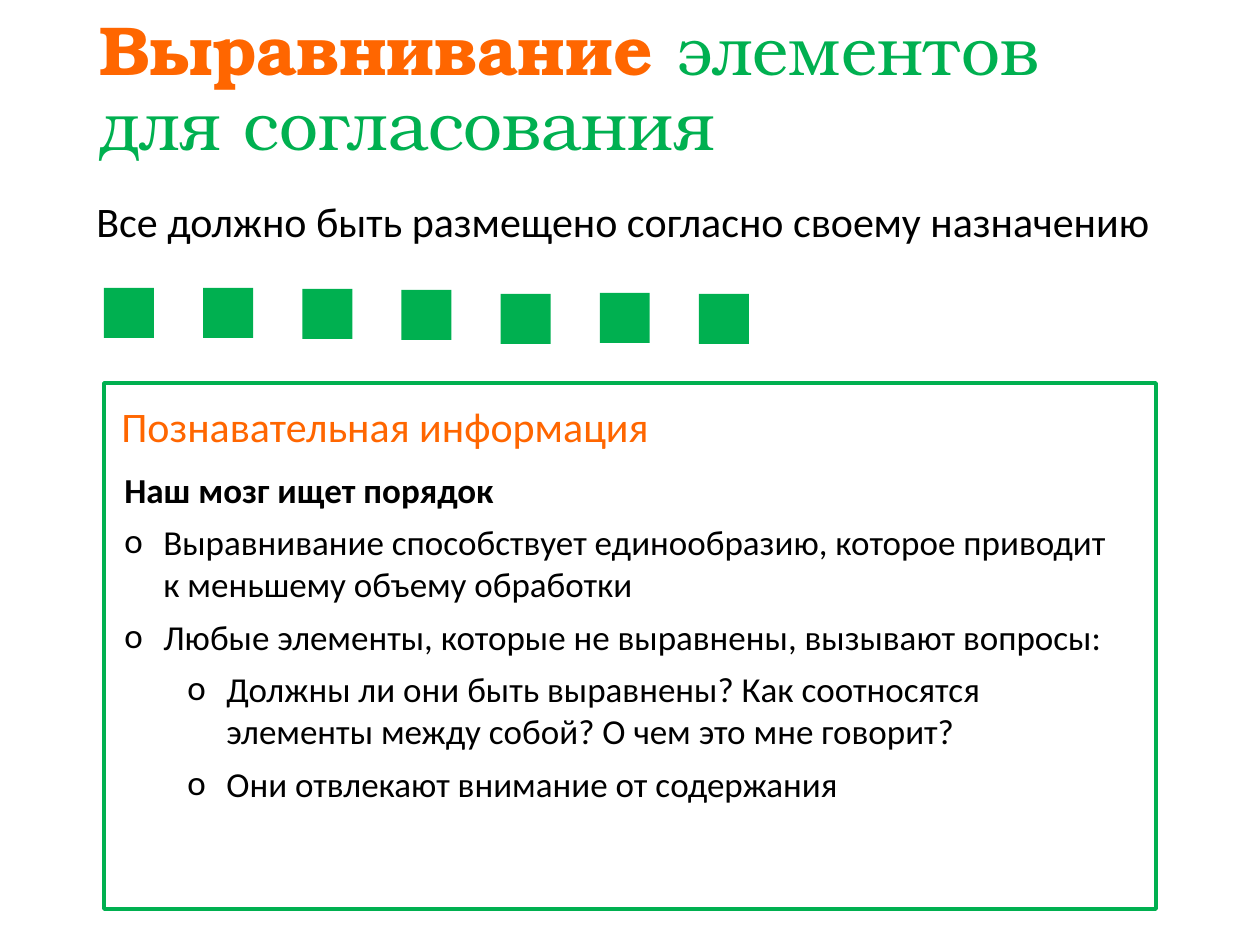
from dataclasses import dataclass

from lxml import etree
from pptx import Presentation
from pptx.dml.color import RGBColor
from pptx.enum import shapes, text
from pptx.oxml.ns import qn
from pptx.util import Emu, Pt

PX = 914400 / 126  # EMU in one px


@dataclass(frozen=True)
class Theme:
    green: str = "00B050"
    orange: str = "FF6600"
    black: str = "000000"
    title_font: str = "TeX Gyre Bonum"
    body_font: str = "Calibri"
    title: float = 39.6
    lead: int = 24
    body: int = 20
    border: float = 2.25


T = Theme()


def px(n):
    return Emu(round(n * PX))


def rgb(value):
    return RGBColor.from_string(value)


def add_rect(parent, box, fill=None, line=None):
    sp = parent.add_shape(shapes.MSO_SHAPE.RECTANGLE, *map(px, box))
    sp.shadow.inherit = False
    if fill:
        sp.fill.solid()
        sp.fill.fore_color.rgb = rgb(fill)
    else:
        sp.fill.background()
    if line:
        sp.line.color.rgb = rgb(line)
        sp.line.width = Pt(T.border)
    else:
        sp.line.fill.background()
    return sp


def add_frame(parent, box, anchor=text.MSO_ANCHOR.TOP):
    tf = parent.add_textbox(*map(px, box)).text_frame
    tf.word_wrap = True
    tf.vertical_anchor = anchor
    return tf


def add_run(p, words, size=T.body, color=T.black, font=T.body_font, bold=False):
    r = p.add_run()
    r.text = words
    r.font.size = Pt(size)
    r.font.name = font
    r.font.bold = bold
    r.font.color.rgb = rgb(color)
    return r


def set_bullet(p, left, hang, char="o"):
    pPr = p._p.get_or_add_pPr()
    pPr.set("marL", str(px(left)))
    pPr.set("indent", str(-px(hang)))
    etree.SubElement(pPr, qn("a:buFont"), typeface=T.body_font)
    etree.SubElement(pPr, qn("a:buChar"), char=char)


def title(slide, box):
    tf = add_frame(slide.shapes, box, text.MSO_ANCHOR.MIDDLE)
    p = tf.paragraphs[0]
    p.line_spacing = 0.9
    add_run(p, "Выравнивание ", T.title, T.orange, T.title_font, bold=True)
    add_run(p, "элементов для согласования", T.title, T.green, T.title_font)


def lead(slide, box):
    p = add_frame(slide.shapes, box).paragraphs[0]
    p.line_spacing = 0.9
    p.space_before = Pt(10)
    add_run(p, "Все должно быть размещено согласно своему назначению", T.lead)


def square_row(slide, box):
    # Even steps across, with deliberately uneven heights
    x, y, w, h = box
    drops = (0, 0, 1, 2, 6, 5, 6)
    side = h - max(drops)
    step = (w - side) / (len(drops) - 1)
    for i, drop in enumerate(drops):
        add_rect(slide.shapes, (x + i * step, y + drop, side, side), fill=T.green)


def info_panel(slide, box):
    x, y, w, h = box
    group = slide.shapes.add_group_shape().shapes
    add_rect(group, box, line=T.green)

    # Heading
    p = add_frame(group, (x + 5, y + 11, w - 30, 63)).paragraphs[0]
    add_run(p, "Познавательная информация", T.lead, T.orange)

    # Statement and its bullets, as (level, words)
    tf = add_frame(group, (x + 8, y + 79, w - 30, 401))
    p = tf.paragraphs[0]
    p.space_after = Pt(6)
    add_run(p, "Наш мозг ищет порядок", bold=True)
    bullets = (
        (0, "Выравнивание способствует единообразию, которое приводит "
            "к меньшему объему обработки"),
        (0, "Любые элементы, которые не выравнены, вызывают вопросы:"),
        (1, "Должны ли они быть выравнены? Как соотносятся "
            "элементы между собой? О чем это мне говорит?"),
        (1, "Они отвлекают внимание от содержания"),
    )
    hang, level_step = 39, 63
    for level, words in bullets:
        p = tf.add_paragraph()
        p.level = level
        p.space_after = Pt(6)
        set_bullet(p, hang + level * level_step, hang)
        add_run(p, words)


def main():
    prs = Presentation()
    prs.slide_width, prs.slide_height = px(1260), px(945)
    slide = prs.slides.add_slide(prs.slide_layouts[6])
    title(slide, (87, 26, 1086, 129))
    info_panel(slide, (104, 383, 1052, 526))
    lead(slide, (84, 195, 1086, 59))
    square_row(slide, (104, 288, 645, 56))
    prs.save("out.pptx")


if __name__ == "__main__":
    main()
